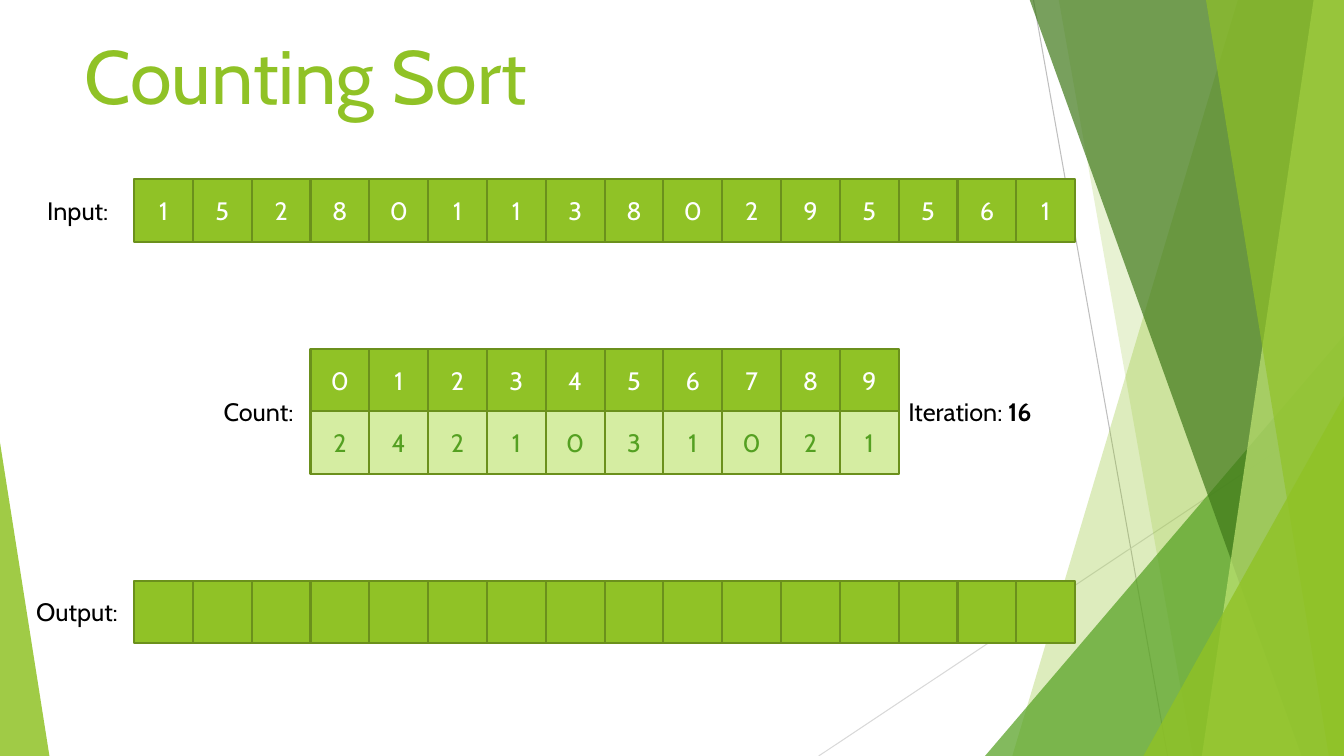
"""Build the Counting Sort slide showing the input, count and output arrays."""
from lxml import etree
from pptx import Presentation
from pptx.dml.color import RGBColor
from pptx.enum.shapes import MSO_CONNECTOR, MSO_SHAPE
from pptx.enum.text import MSO_ANCHOR, MSO_AUTO_SIZE, PP_ALIGN
from pptx.oxml.ns import qn
from pptx.util import Inches, Pt

STRAIGHT = MSO_CONNECTOR.STRAIGHT
TRIANGLE, RECTANGLE = MSO_SHAPE.ISOSCELES_TRIANGLE, MSO_SHAPE.RECTANGLE
TOP, MIDDLE = MSO_ANCHOR.TOP, MSO_ANCHOR.MIDDLE
LEFT, CENTER = PP_ALIGN.LEFT, PP_ALIGN.CENTER
FIT_SHAPE = MSO_AUTO_SIZE.SHAPE_TO_FIT_TEXT
LIME, GREEN, PALE, OLIVE = "90C226", "54A021", "D5EDA2", "6B901C"
RIGHT_EDGE, BOTTOM_EDGE, BLEED = 13.33, 7.5, -0.01
CELL_WIDTH, CELL_HEIGHT, ARRAY_LEFT = 7 / 12, 0.62, 1.33


def color(hex_code):
    return RGBColor.from_string(hex_code)


def write(frame, text, size=18, ink="000000", align=LEFT, anchor=TOP, bold=None):
    frame.word_wrap = True
    frame.vertical_anchor = anchor
    paragraph = frame.paragraphs[0]
    paragraph.alignment = align
    run = paragraph.add_run()
    run.text = text
    run.font.name = "Cabin"
    run.font.size = Pt(size)
    run.font.bold = bold
    run.font.color.rgb = color(ink)


deck = Presentation()
deck.slide_width, deck.slide_height = Inches(RIGHT_EDGE), Inches(BOTTOM_EDGE)
slide = deck.slides.add_slide(deck.slide_layouts[5])
shapes = slide.shapes

for start_x, start_y, end_x, end_y, gray in [
    (10.25, 0, 11.58, 7.5, "BFBFBF"),
    (13.33, 4.03, 8.12, 7.5, "D9D9D9"),
]:
    ray = shapes.add_connector(
        STRAIGHT, Inches(start_x), Inches(start_y), Inches(end_x), Inches(end_y)
    )
    ray.line.color.rgb = color(gray)
    ray.line.width = Pt(0.75)
    etree.SubElement(ray._element.spPr, qn("a:effectLst"))

# Facets give top x and bottom x; triangles give left, top, width and apex.
facets = [
    ((12.28, 10.04), LIME, 30),
    ((10.5, 11.83), LIME, 20),
    ((9.77, 3.33, 3.56, 1), GREEN, 72),
    ((10.21, 12.91), "3F7819", 70),
    ((13.03, 11.92), "C0E474", 70),
    ((11.96, 13.18), LIME, 65),
    ((11.34, 3.93, 1.99, 1), LIME, 80),
    ((0, 4.39, 0.49, 0), LIME, 85),
]
for outline, tint, opacity in facets:
    if len(outline) == 2:
        top_x, bottom_x = outline
        builder = shapes.build_freeform(Inches(top_x), Inches(BLEED))
        builder.add_line_segments([
            (Inches(RIGHT_EDGE), Inches(BLEED)),
            (Inches(RIGHT_EDGE), Inches(BOTTOM_EDGE)),
            (Inches(bottom_x), Inches(BOTTOM_EDGE)),
        ])
        facet = builder.convert_to_shape()
    else:
        left, top, width, apex = outline
        facet = shapes.add_shape(
            TRIANGLE, Inches(left), Inches(top), Inches(width), Inches(BOTTOM_EDGE - top)
        )
        facet.adjustments[0] = apex
    facet.shadow.inherit = False
    facet.line.fill.background()
    facet.fill.solid()
    facet.fill.fore_color.rgb = color(tint)
    tint_xml = facet._element.spPr.find(qn("a:solidFill"))[0]
    etree.SubElement(tint_xml, qn("a:alpha"), val=str(opacity * 1000))

title = shapes.title
title.left, title.top = Inches(0.74), Inches(0.24)
title.width, title.height = Inches(9.4), Inches(1.7)
write(title.text_frame, "Counting Sort", size=54, ink=LIME)

arrays = [
    (0, 1.78, "1528011380295561", LIME, "FFFFFF"),
    (3, 3.46, "0123456789", LIME, "FFFFFF"),
    (3, 3.46 + CELL_HEIGHT, "2421031021", PALE, GREEN),
    (0, 5.76, " " * 16, LIME, "FFFFFF"),
]
for first_column, top, digits, background, ink in arrays:
    for column, digit in enumerate(digits, first_column):
        cell = shapes.add_shape(
            RECTANGLE, Inches(ARRAY_LEFT + column * CELL_WIDTH), Inches(top),
            Inches(CELL_WIDTH), Inches(CELL_HEIGHT),
        )
        cell.shadow.inherit = False
        cell.fill.solid()
        cell.fill.fore_color.rgb = color(background)
        cell.line.color.rgb = color(OLIVE)
        cell.line.width = Pt(1.5)
        if digit.strip():
            write(cell.text_frame, digit, ink=ink, align=CENTER, anchor=MIDDLE)

for left, top, width, caption, value in [
    (0.37, 1.89, 0.97, "Input:", ""),
    (2.12, 3.88, 0.96, "Count:", ""),
    (0.26, 5.87, 1.08, "Output:", ""),
    (8.91, 3.88, 1.75, "Iteration: ", "16"),
]:
    label = shapes.add_textbox(Inches(left), Inches(top), Inches(width), Inches(0.4))
    label.text_frame.auto_size = FIT_SHAPE
    write(label.text_frame, caption)
    if value:
        write(label.text_frame, value, bold=True)

deck.save("out.pptx")
